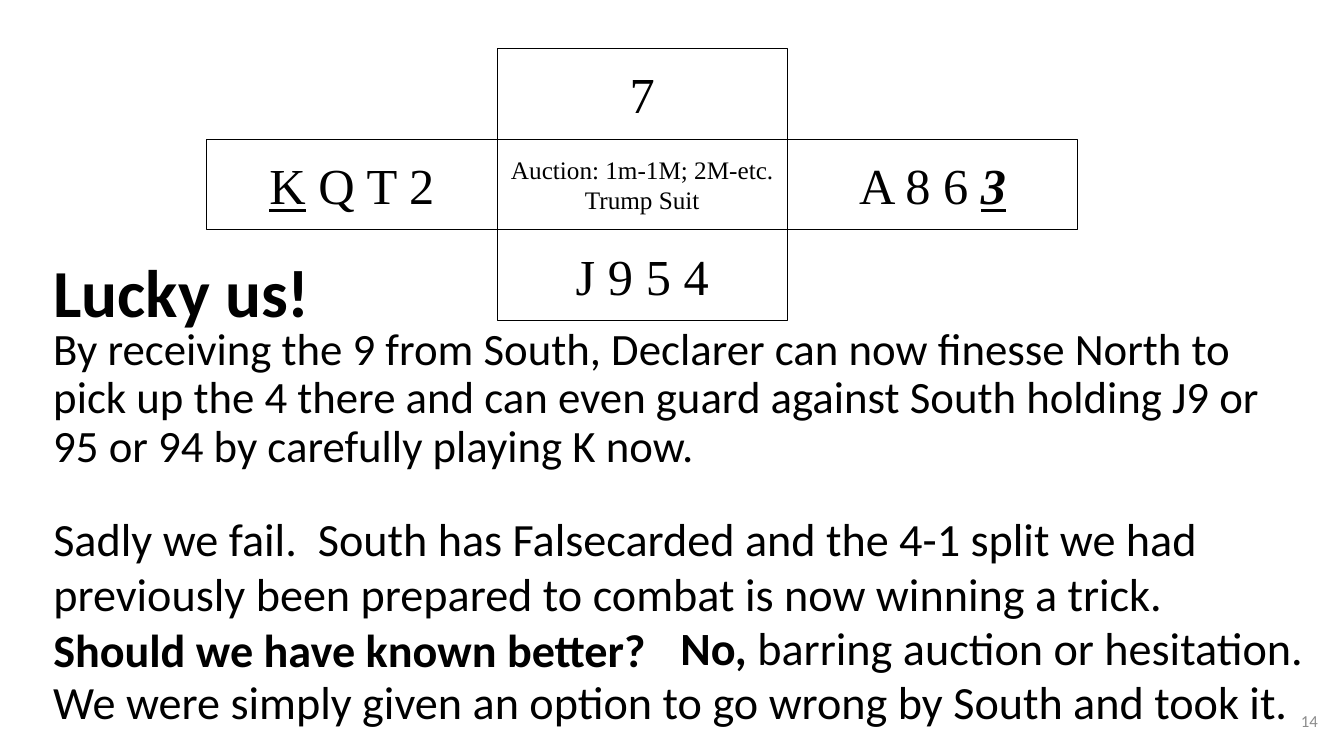
import pptx
import pptx.util
import pptx.dml.color
import pptx.enum.shapes
import pptx.enum.text

Inches, Pt = pptx.util.Inches, pptx.util.Pt
ALIGN = pptx.enum.text.PP_ALIGN
ANCHOR = pptx.enum.text.MSO_ANCHOR


def color(value):
    return pptx.dml.color.RGBColor.from_string(value)


def write(frame, paragraphs, font, align=ALIGN.LEFT, anchor=ANCHOR.TOP, spacing=None):
    """Fill a frame; each paragraph is a list of (text, run format) pairs."""
    frame.word_wrap = True
    frame.auto_size = pptx.enum.text.MSO_AUTO_SIZE.NONE
    frame.vertical_anchor = anchor
    for index, runs in enumerate(paragraphs):
        paragraph = frame.add_paragraph() if index else frame.paragraphs[0]
        paragraph.alignment = align
        for name, value in (spacing or {}).items():
            setattr(paragraph, name, value)
        for text, extra in runs:
            run = paragraph.add_run()
            run.text = text
            run.font.color.rgb = color("000000")
            for name, value in {**font, **extra}.items():
                setattr(run.font, name, value)


deck = pptx.Presentation()
deck.slide_width, deck.slide_height = Inches(13.33), Inches(7.5)
slide = deck.slides.add_slide(deck.slide_layouts[5])

# Title
title = slide.shapes.title
title.left, title.top = Inches(0.43), Inches(2.43)
title.width, title.height = Inches(3.82), Inches(0.91)
write(title.text_frame, [[("Lucky us!", {})]],
      {"name": "Calibri", "size": Pt(48), "bold": True})

# Card diagram: hands around the auction, as (column, row, size, lines)
hand_width, hand_height = 2.88, 0.9
hands = [
    (0, 1, 36, [[("K", {"underline": True}), (" Q T 2", {})]]),
    (2, 1, 36, [[("A 8 6 ", {}),
                 ("3", {"bold": True, "italic": True, "underline": True})]]),
    (1, 1, 18, [[("Auction: 1m-1M; 2M-etc.", {})], [("Trump Suit", {})]]),
    (1, 0, 36, [[("7", {})]]),
    (1, 2, 36, [[("J 9 5 4", {})]]),
]
for column, row, size, lines in hands:
    hand = slide.shapes.add_shape(
        pptx.enum.shapes.MSO_SHAPE.RECTANGLE,
        Inches(2.05 + column * hand_width), Inches(0.48 + row * hand_height),
        Inches(hand_width), Inches(hand_height))
    hand.shadow.inherit = False
    hand.fill.solid()
    hand.fill.fore_color.rgb = color("FFFFFF")
    hand.line.color.rgb = color("000000")
    hand.line.width = Pt(0.75)
    write(hand.text_frame, lines, {"name": "Times New Roman", "size": Pt(size)},
          ALIGN.CENTER, ANCHOR.MIDDLE)

# Commentary: position, size, paragraphs, paragraph spacing
bold = {"bold": True}
commentary = [
    (0.43, 3.19, 12.47, 2.28, 32,
     [[("By receiving the 9 from South, Declarer can now finesse North to pick up "
        "the 4 there and can even guard against South holding J9 or 95 or 94 by "
        "carefully playing K now.", {})]],
     {"line_spacing": 0.9, "space_before": Pt(10)}),
    (0.43, 5.01, 12.58, 2.28, 33,
     [[("Sadly we fail.  South has Falsecarded and the 4-1 split we had previously "
        "been prepared to combat is now winning a trick.", {})],
      [("Should we have known better?", bold)]], {}),
    (6.65, 6.1, 6.44, 0.66, 33,
     [[("No, ", bold), ("barring auction or hesitation.", {})]], {}),
    (0.43, 6.63, 12.47, 0.66, 33,
     [[("We were simply given an option to go wrong by South and took it.", {})]], {}),
]
for left, top, width, height, size, paragraphs, spacing in commentary:
    remark = slide.shapes.add_textbox(
        Inches(left), Inches(top), Inches(width), Inches(height))
    write(remark.text_frame, paragraphs, {"name": "Calibri", "size": Pt(size)},
          spacing=spacing)

# Slide number
number = slide.shapes.add_textbox(Inches(10.17), Inches(6.95), Inches(3), Inches(0.4))
write(number.text_frame, [[("14", {})]], {"name": "Calibri", "size": Pt(12)},
      ALIGN.RIGHT, ANCHOR.MIDDLE)
number.text_frame.paragraphs[0].runs[0].font.color.rgb = color("8C8C8C")

deck.save("out.pptx")
